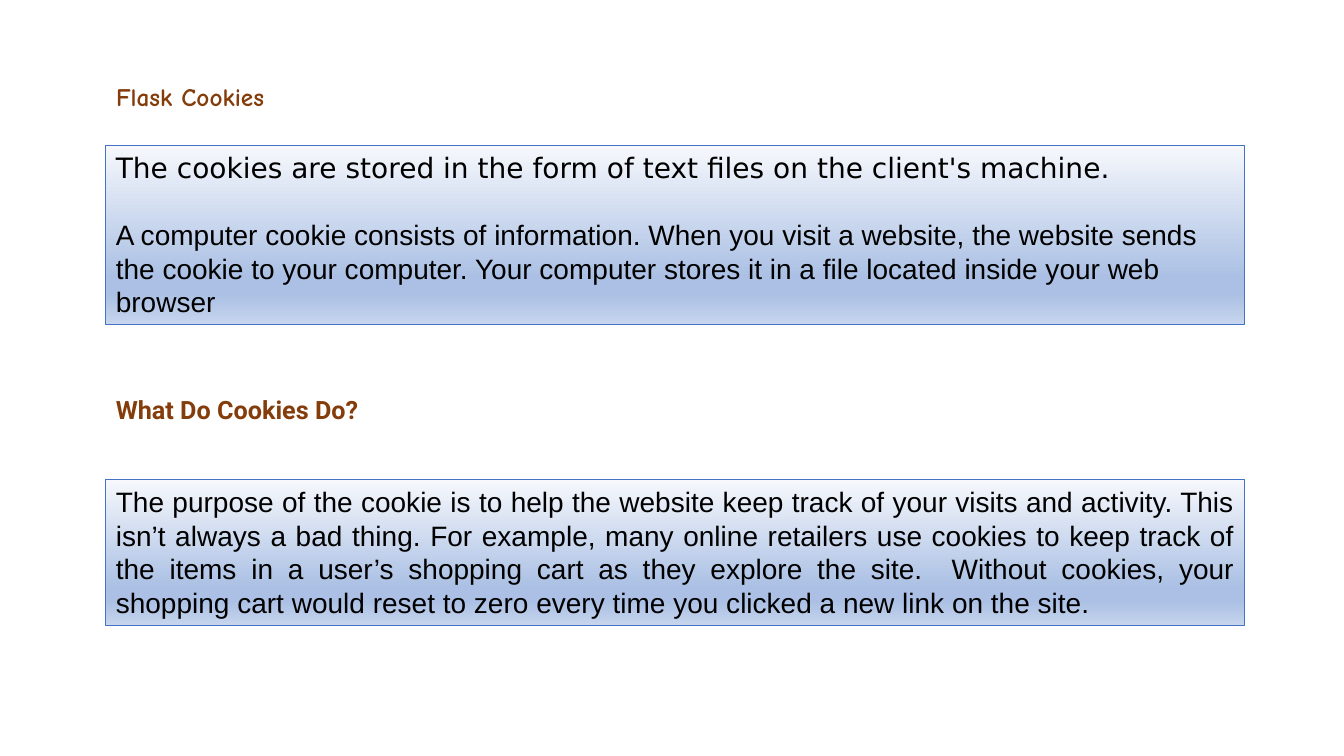
from lxml import etree
from pptx import Presentation
from pptx.dml.color import RGBColor
from pptx.enum.shapes import MSO_SHAPE
from pptx.enum.text import MSO_ANCHOR, MSO_AUTO_SIZE, PP_ALIGN
from pptx.oxml.ns import qn
from pptx.util import Cm, Pt

RECT = MSO_SHAPE.RECTANGLE
TOP = MSO_ANCHOR.TOP
FIXED = MSO_AUTO_SIZE.NONE
LEFT, JUST = PP_ALIGN.LEFT, PP_ALIGN.JUSTIFY

BROWN, BLACK, BLUE = "843C0B", "000000", "4472C4"
STOPS = [(0, "F6F8FC"), (74, "ABC0E4"), (83, "ABC0E4"), (100, "C7D5ED")]
EDGE, WIDE, SHORT, HIGH = 2.67, 28.7, 16.94, 1.02

HEADS = [
    ("Flask Cookies", "Comic Neue", 1.93),
    ("What Do Cookies Do?", "Roboto", 9.8),
]
BOXES = [
    (3.66, 4.52, LEFT, [
        ("The cookies are stored in the form of text files on the client's machine.", "DejaVu Sans"),
        ("A computer cookie consists of information. When you visit a website, the website sends "
         "the cookie to your computer. Your computer stores it in a file located inside your web "
         "browser", "Arial"),
    ]),
    (12.09, 3.68, JUST, [
        ("The purpose of the cookie is to help the website keep track of your visits and activity. "
         "This isn’t always a bad thing. For example, many online retailers use cookies to keep "
         "track of the items in a user’s shopping cart as they explore the site.  Without cookies, "
         "your shopping cart would reset to zero every time you clicked a new link on the site.",
         "Arial"),
    ]),
]


def color(code):
    return RGBColor.from_string(code)


def apply(item, form):
    for key, value in form.items():
        setattr(item, key, value)


def write(para, text, font, size, code, bold, form):
    run = para.add_run()
    run.text = text
    apply(run.font, {"name": font, "size": Pt(size), "bold": bold})
    run.font.color.rgb = color(code)
    apply(para, form)


def frame(shape):
    apply(shape.text_frame, {"word_wrap": True, "auto_size": FIXED, "vertical_anchor": TOP})
    return shape.text_frame


def shade(shape):
    shape.fill.gradient()
    shape.fill.gradient_angle = 270
    group = shape.fill._xPr.find(qn("a:gradFill")).find(qn("a:gsLst"))
    for stop in list(group):
        group.remove(stop)
    for pos, code in STOPS:
        stop = etree.SubElement(group, qn("a:gs"), pos=str(pos * 1000))
        etree.SubElement(stop, qn("a:srgbClr"), val=code)


def main():
    deck = Presentation()
    apply(deck, {"slide_width": Cm(33.87), "slide_height": Cm(19.05)})
    slide = deck.slides.add_slide(deck.slide_layouts[5])
    shapes = slide.shapes

    for index, (text, font, top) in enumerate(HEADS):
        area = {"left": Cm(EDGE), "top": Cm(top), "width": Cm(SHORT), "height": Cm(HIGH)}
        head = shapes.add_textbox(**area) if index else shapes.title
        apply(head, area)
        write(frame(head).paragraphs[0], text, font, 18, BROWN, True, {"alignment": LEFT})

    for top, high, align, paras in BOXES:
        box = shapes.add_shape(RECT, Cm(EDGE), Cm(top), Cm(WIDE), Cm(high))
        box.shadow.inherit = False
        shade(box)
        box.line.color.rgb = color(BLUE)
        box.line.width = Pt(0.75)
        body = frame(box)
        for index, (text, font) in enumerate(paras):
            para = body.add_paragraph() if index else body.paragraphs[0]
            form = {"alignment": align, "line_spacing": Pt(24), "space_before": Pt(24 * index)}
            write(para, text, font, 20, BLACK, False, form)

    deck.save("out.pptx")


if __name__ == "__main__":
    main()
